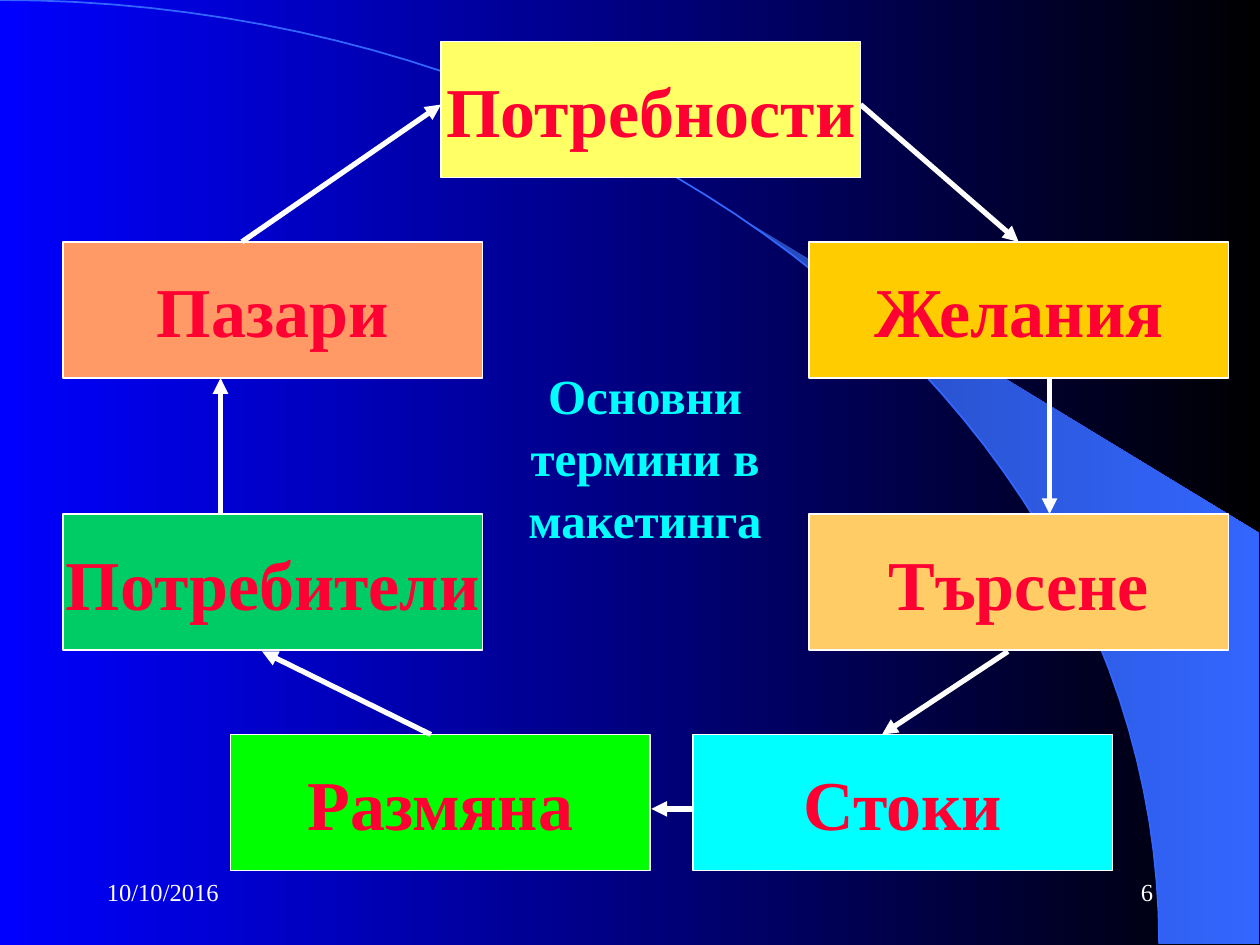
from math import cos, radians, sin

from pptx import Presentation
from pptx.dml.color import RGBColor
from pptx.enum.shapes import MSO_CONNECTOR, MSO_SHAPE
from pptx.enum.text import MSO_ANCHOR, MSO_AUTO_SIZE, PP_ALIGN
from pptx.oxml.ns import qn
from pptx.util import Inches, Pt
from lxml.etree import SubElement

FONT = "Times New Roman"
COLORS = {
    "blue": "0000FF", "black": "000000", "white": "FFFFFF",
    "deep": "2449B6", "sky": "3366FF", "red": "FF0033", "aqua": "00FFFF",
    "yellow": "FFFF66", "salmon": "FF9966", "gold": "FFCC00",
    "green": "00CC66", "sand": "FFCC66", "lime": "00FF00",
}
WIDE, HIGH = 3.33, 1.08
TERMS = [
    ("Потребности", 3.5, 0.33, "yellow"),
    ("Пазари", 0.5, 1.92, "salmon"),
    ("Желания", 6.42, 1.92, "gold"),
    ("Потребители", 0.5, 4.08, "green"),
    ("Търсене", 6.42, 4.08, "sand"),
    ("Размяна", 1.83, 5.83, "lime"),
    ("Стоки", 5.5, 5.83, "aqua"),
]
# Start point, end point, and the term whose top middle the arrow meets
ARROWS = [
    ((6.83, 0.83), (8.08, 1.92), "Желания"),
    ((8.33, 3), (8.33, 4.08), None),
    ((8, 5.17), (7, 5.83), None),
    ((3.42, 5.83), (2.08, 5.17), None),
    ((5.5, 6.42), (5.17, 6.42), None),
    ((1.75, 4.08), (1.75, 3), None),
    ((1.92, 1.92), (3.5, 0.83), None),
]


def color(name):
    return RGBColor.from_string(COLORS[name])


def blend(fill, first, last):
    """Fill with a gradient from left to right."""
    fill.gradient()
    fill.gradient_angle = 0
    for stop, name, place in zip(fill.gradient_stops, (first, last), (0, 1)):
        stop.color.rgb = color(name)
        stop.position = place


def write(frame, text, size, tint, align, bold=False):
    frame.text = text
    par = frame.paragraphs[0]
    par.alignment = align
    par.font.name = FONT
    par.font.size = Pt(size)
    par.font.bold = bold
    par.font.color.rgb = color(tint)
    return par


def arc(box, start):
    """Points of a quarter ellipse, from start degrees down to the right."""
    left, top, width, height = box
    steps = 48
    turns = [radians(start + (90 - start) * i / steps) for i in range(steps + 1)]
    return [(left + width * sin(t), top + height * (1 - cos(t))) for t in turns]


def outline(slide, points, close):
    spots = [(Inches(x), Inches(y)) for x, y in points]
    pen = slide.shapes.build_freeform(*spots[0])
    pen.add_line_segments(spots[1:], close=close)
    shape = pen.convert_to_shape()
    shape.shadow.inherit = False
    return shape


def add_scene(slide, box):
    blend(slide.background.fill, "blue", "black")
    edge = 9.99
    wedge = outline(slide, arc(box, 39.8) + [(edge, 7.49), (edge, 4.23)], True)
    blend(wedge.fill, "deep", "sky")
    wedge.line.fill.background()
    curve = outline(slide, arc(box, 0), False)
    curve.fill.background()
    curve.line.color.rgb = color("sky")
    curve.line.width = Pt(1)


def add_note(slide, box, text, align):
    frame = slide.shapes.add_textbox(*map(Inches, box)).text_frame
    frame.word_wrap = True
    frame.vertical_anchor = MSO_ANCHOR.MIDDLE
    write(frame, text, 14, "white", align)


def add_term(slide, box, text, tint):
    shape = slide.shapes.add_shape(MSO_SHAPE.RECTANGLE, *map(Inches, box))
    shape.shadow.inherit = False
    shape.fill.solid()
    shape.fill.fore_color.rgb = color(tint)
    shape.line.color.rgb = color("white")
    shape.line.width = Pt(0.75)
    frame = shape.text_frame
    frame.word_wrap = False
    frame.vertical_anchor = MSO_ANCHOR.MIDDLE
    write(frame, text, 40, "red", PP_ALIGN.CENTER, True)
    return shape


def add_arrow(slide, start, end, goal=None):
    link = slide.shapes.add_connector(
        MSO_CONNECTOR.STRAIGHT, *map(Inches, start + end))
    if goal is not None:
        link.end_connect(goal, 0)
    link.line.color.rgb = color("white")
    link.line.width = Pt(3)
    SubElement(link.line._get_or_add_ln(), qn("a:tailEnd"), type="triangle")
    SubElement(link._element.spPr, qn("a:effectLst"))


def add_cycle(slide):
    """The ring of terms and the arrows between them."""
    boxes = {text: add_term(slide, (x, y, WIDE, HIGH), text, tint)
             for text, x, y, tint in TERMS}
    for start, end, goal in ARROWS:
        add_arrow(slide, start, end, boxes.get(goal))


def set_title(slide, box, text):
    title = slide.shapes.title
    title.left, title.top, title.width, title.height = map(Inches, box)
    frame = title.text_frame
    frame.word_wrap = True
    frame.auto_size = MSO_AUTO_SIZE.NONE
    frame.vertical_anchor = MSO_ANCHOR.TOP
    par = write(frame, text, 28, "aqua", PP_ALIGN.CENTER, True)
    par.line_spacing = 1.05


def main():
    deck = Presentation()
    deck.slide_width, deck.slide_height = Inches(10), Inches(7.5)
    slide = deck.slides.add_slide(deck.slide_layouts[5])
    add_scene(slide, (0, 0, 9.2, 7.49))
    add_note(slide, (0.75, 6.83, 2.08, 0.5), "10/10/2016", PP_ALIGN.LEFT)
    add_note(slide, (7.17, 6.83, 2.08, 0.5), "6", PP_ALIGN.RIGHT)
    add_cycle(slide)
    set_title(slide, (4.08, 2.83, 2.08, 1.5), "Основни термини в макетинга")
    deck.save("out.pptx")


if __name__ == "__main__":
    main()
